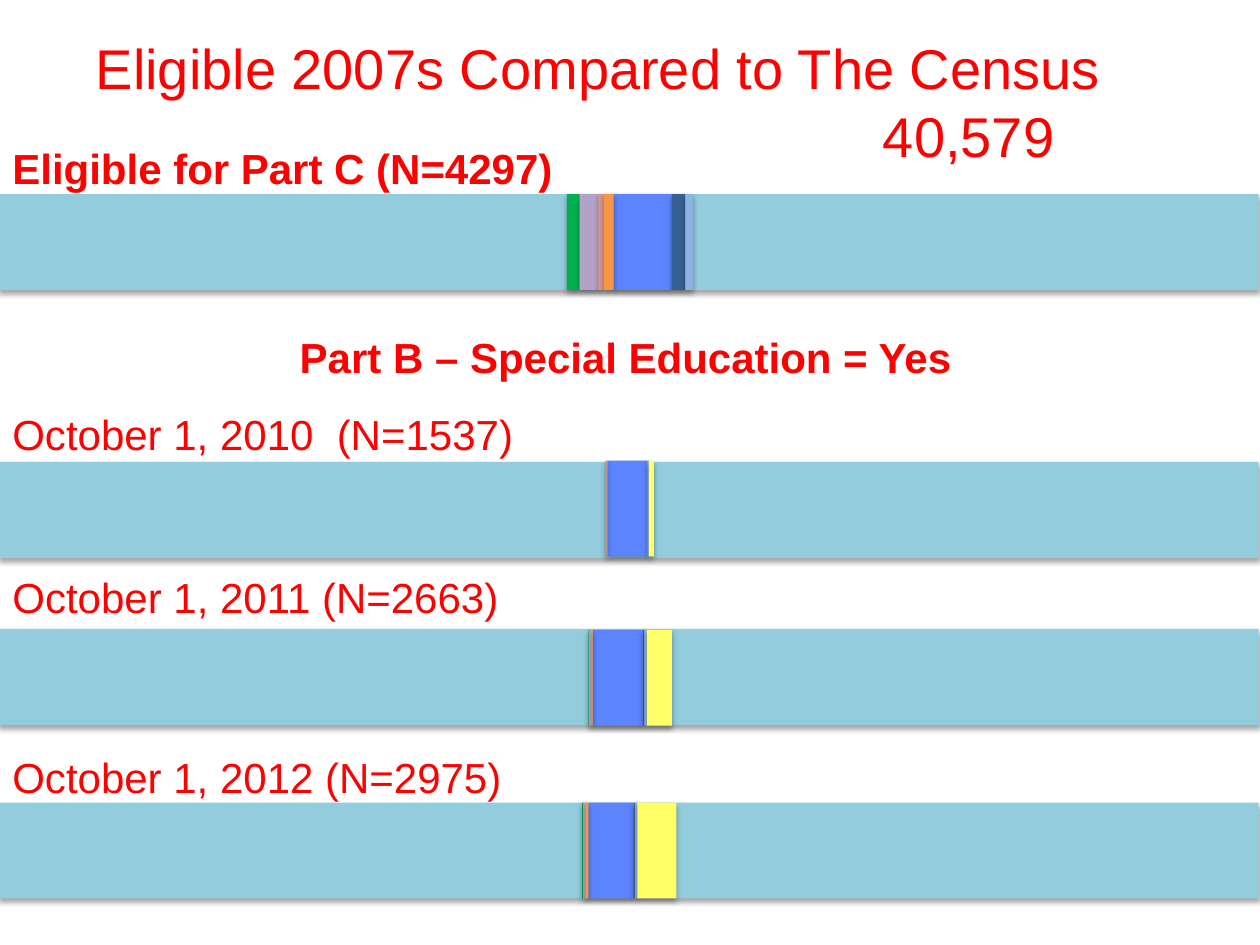
from itertools import accumulate
from lxml import etree
from pptx import Presentation
from pptx.dml.color import RGBColor
from pptx.enum.shapes import MSO_SHAPE
from pptx.enum.text import MSO_ANCHOR, PP_ALIGN
from pptx.oxml.ns import qn
from pptx.util import Pt

RECT = MSO_SHAPE.RECTANGLE
TOP = MSO_ANCHOR.TOP
LEFT = PP_ALIGN.LEFT

COLORS = {
    "red": "FF0000", "band": "93CDDD", "green": "00B050", "purple": "B3A2C7",
    "rose": "D99694", "orange": "F79646", "blue": "5D84FF", "navy": "376092",
    "sky": "8EB4E3", "yellow": "FFFF66", "shade": "000000",
}

TITLE = "Eligible 2007s Compared to The Census"

# text, left, top, width, height, format
LABELS = [
    ("40,579", 497.5, 54.7, 113, 46, {"size": 32}),
    ("Eligible for Part C (N=4297)", 0, 77.8, 326, 36, {"bold": True}),
    ("Part B – Special Education = Yes", 164.2, 185.8, 390, 36, {"bold": True}),
    ("October 1, 2010  (N=1537)", 0, 229.7, 304, 36, {}),
    ("October 1, 2011 (N=2663)", 0, 323.3, 295, 36, {}),
    ("October 1, 2012 (N=2975)", 0, 426.2, 297, 36, {}),
]

# Parts of each bar, from left to right
PARTS = ["green", "purple", "rose", "orange", "blue", "navy", "sky", "yellow"]

# band top, part top, start of first part, widths of the parts
BARS = [
    (110.9, 110.9, 324, [7.2, 10.8, 2.9, 5.8, 33.1, 7.9, 4.3, 0]),
    (264, 263.2, 345.8, [0.2, 0.5, 0.2, 0.4, 23, 0, 0.7, 2.9]),
    (359.4, 359.9, 336.2, [0.3, 1.2, 0.3, 0.7, 28.8, 0.7, 1.4, 14.4]),
    (458.6, 458.6, 332.6, [0.7, 1.2, 0.3, 1.4, 25.9, 0.7, 1.4, 22.3]),
]
BAR_W, BAR_H = 720, 54.8


def rgb(name):
    return RGBColor.from_string(COLORS[name])


def place(shape, left, top, width, height):
    shape.left, shape.top = Pt(left), Pt(top)
    shape.width, shape.height = Pt(width), Pt(height)


def write(shape, text, size=24, bold=False, color="red"):
    frame = shape.text_frame
    frame.word_wrap = False
    frame.vertical_anchor = TOP
    para = frame.paragraphs[0]
    para.alignment = LEFT
    run = para.add_run()
    run.text = text
    font = run.font
    font.name, font.size, font.bold = "Arial", Pt(size), bold
    font.color.rgb = rgb(color)


def shade(shape):
    """Give the shape a soft shadow straight below it."""
    shape.shadow.inherit = False
    effects = shape._element.spPr.find(qn("a:effectLst"))
    outer = etree.SubElement(
        effects, qn("a:outerShdw"), blurRad=str(Pt(3.1)), dist=str(Pt(1.8)),
        dir="5400000", rotWithShape="0")
    tint = etree.SubElement(outer, qn("a:srgbClr"), val=COLORS["shade"])
    etree.SubElement(tint, qn("a:alpha"), val="35000")


def block(slide, color, left, top, width):
    shape = slide.shapes.add_shape(RECT, Pt(left), Pt(top), Pt(width), Pt(BAR_H))
    shape.fill.solid()
    shape.fill.fore_color.rgb = rgb(color)
    shape.line.fill.background()
    shade(shape)


def draw_bar(slide, top, part_top, start, widths):
    block(slide, "band", -0.7, top, BAR_W)
    parts = list(zip(PARTS, accumulate(widths, initial=start), widths))
    # The blue part lies beneath its neighbours
    for color, left, width in sorted(parts, key=lambda part: part[0] != "blue"):
        if width:
            block(slide, color, left, part_top, width)


def main():
    deck = Presentation()
    deck.slide_width, deck.slide_height = Pt(720), Pt(540)
    slide = deck.slides.add_slide(deck.slide_layouts[5])
    title = slide.shapes.title
    place(title, 47.5, 15.8, 593, 46)
    write(title, TITLE, size=32)
    for text, left, top, width, height, style in LABELS:
        box = slide.shapes.add_textbox(Pt(left), Pt(top), Pt(width), Pt(height))
        write(box, text, **style)
    for bar in BARS:
        draw_bar(slide, *bar)
    deck.save("out.pptx")


if __name__ == "__main__":
    main()
